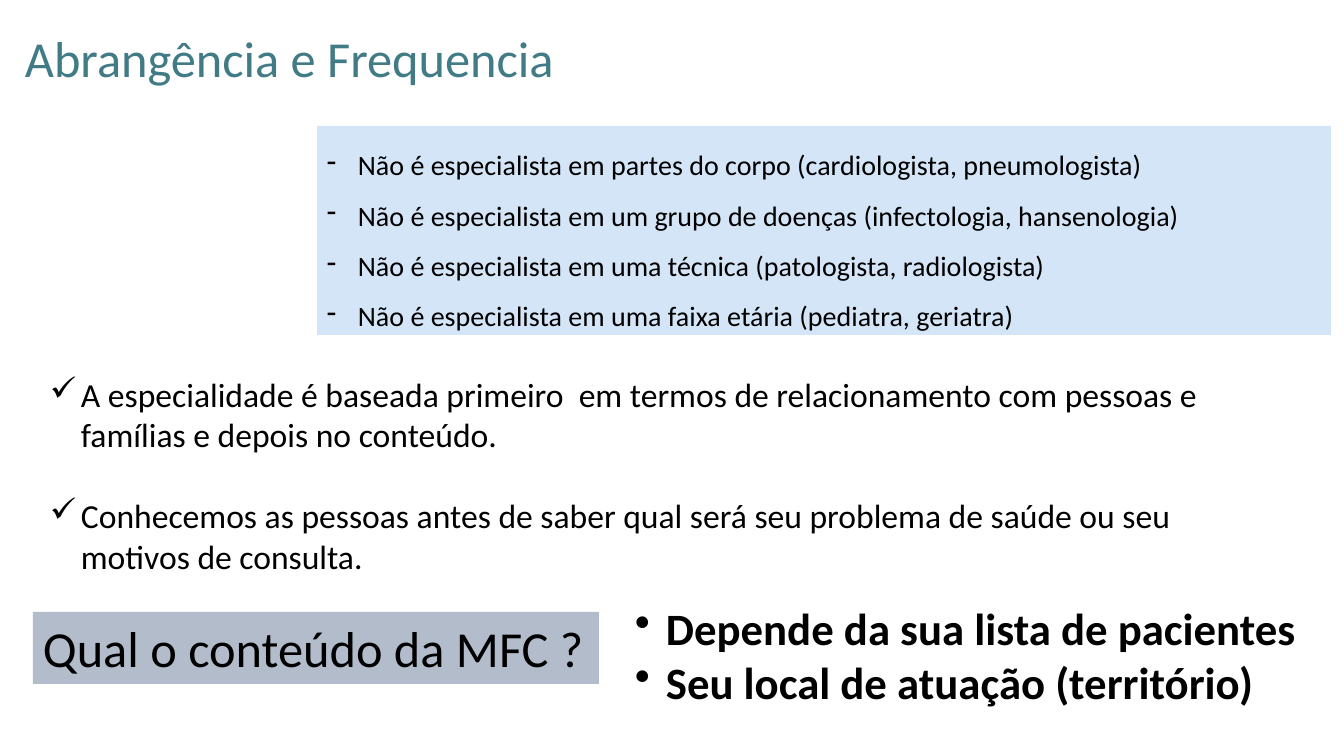
import pptx
import pptx.dml.color
import pptx.enum.shapes
import pptx.enum.text
import pptx.util
from pptx.oxml.ns import qn
from lxml import etree

PX = 914400 / 100.8
HANG = 31


def px(length):
    return pptx.util.Emu(round(length * PX))


def colour(value):
    return pptx.dml.color.RGBColor.from_string(value)


def add_panel(slide, box, fill):
    panel = slide.shapes.add_shape(
        pptx.enum.shapes.MSO_SHAPE.RECTANGLE, *map(px, box))
    panel.shadow.inherit = False
    panel.fill.solid()
    panel.fill.fore_color.rgb = colour(fill)
    panel.line.fill.background()
    return panel


def add_text_area(slide, box):
    return slide.shapes.add_textbox(*map(px, box))


def set_bullet(paragraph, mark, margin=HANG, hang=HANG):
    properties = paragraph._p.get_or_add_pPr()
    properties.set("marL", str(px(margin)))
    properties.set("indent", str(-px(hang)))
    etree.SubElement(properties, qn("a:buChar")).set("char", mark)


def write(shape, lines, size, ink="000000", bold=False, wrap=True,
          mark=None, spacing=1.0, gap=0):
    frame = shape.text_frame
    frame.word_wrap = wrap
    frame.auto_size = pptx.enum.text.MSO_AUTO_SIZE.SHAPE_TO_FIT_TEXT
    frame.vertical_anchor = pptx.enum.text.MSO_ANCHOR.TOP
    frame.text = "\n".join(lines)
    for index, paragraph in enumerate(frame.paragraphs):
        paragraph.alignment = pptx.enum.text.PP_ALIGN.LEFT
        paragraph.line_spacing = spacing
        paragraph.space_before = pptx.util.Pt(gap if index else 0)
        if mark:
            set_bullet(paragraph, mark)
        paragraph.font.name = "Calibri"
        paragraph.font.size = pptx.util.Pt(size)
        paragraph.font.bold = bold
        paragraph.font.color.rgb = colour(ink)


def main():
    deck = pptx.Presentation()
    deck.slide_width, deck.slide_height = px(1344), px(756)
    slide = deck.slides.add_slide(deck.slide_layouts[6])

    exclusions = add_panel(slide, (317, 126, 1014, 209), "D4E5F7")
    write(exclusions, [
        "Não é especialista em partes do corpo (cardiologista, pneumologista)",
        "Não é especialista em um grupo de doenças (infectologia, hansenologia)",
        "Não é especialista em uma técnica (patologista, radiologista)",
        "Não é especialista em uma faixa etária (pediatra, geriatra)",
    ], 20, mark="-", spacing=1.5)

    principles = add_text_area(slide, (40, 369, 1187, 214))
    write(principles, [
        "A especialidade é baseada primeiro  em termos de relacionamento "
        "com pessoas e famílias e depois no conteúdo.",
        "Conhecemos as pessoas antes de saber qual será seu problema de "
        "saúde ou seu motivos de consulta.",
    ], 24, mark="✓", gap=29)

    question = add_panel(slide, (33, 612, 566, 72), "B2BCCB")
    write(question, ["Qual o conteúdo da MFC ?"], 36, wrap=False)

    answers = add_text_area(slide, (625, 596, 686, 119))
    write(answers, [
        "Depende da sua lista de pacientes",
        "Seu local de atuação (território)",
    ], 32, bold=True, mark="•")

    title = add_text_area(slide, (15, 22, 554, 72))
    write(title, ["Abrangência e Frequencia"], 36, ink="417B85", wrap=False)

    deck.save("out.pptx")


if __name__ == "__main__":
    main()
